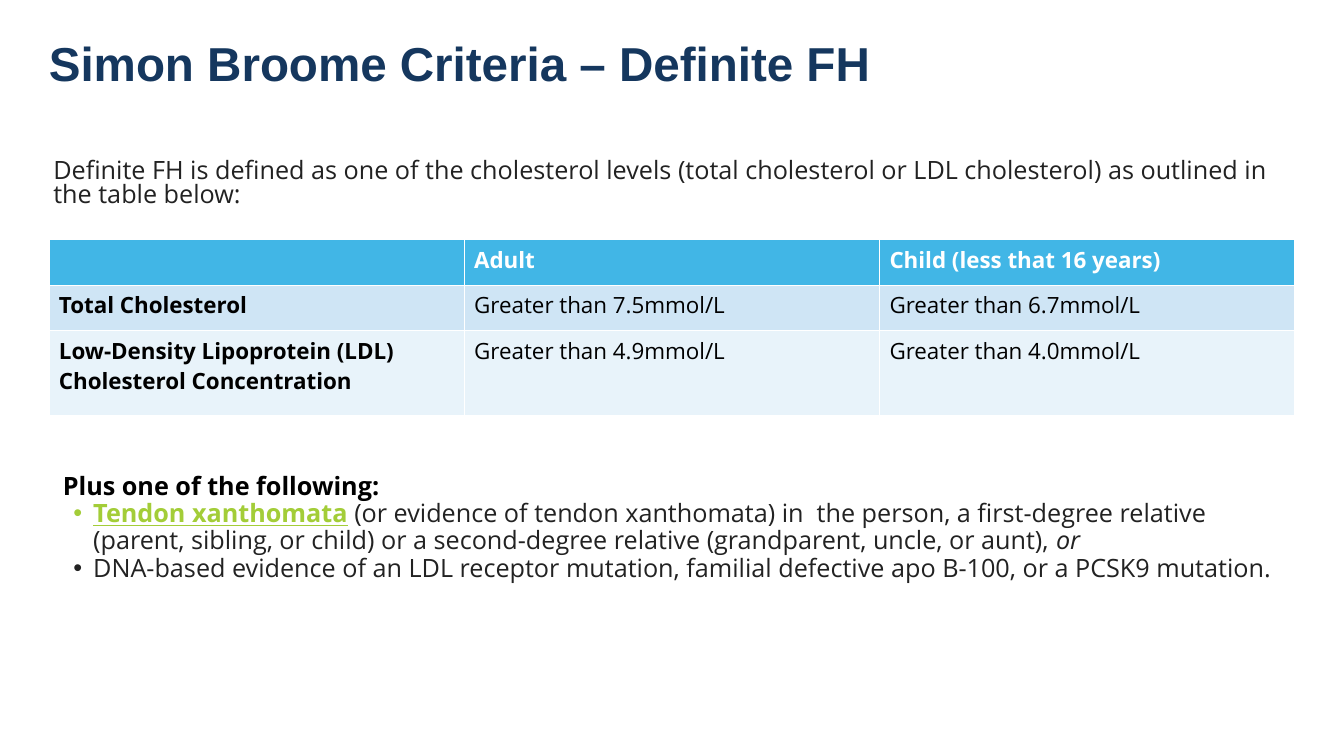
from lxml.etree import SubElement
from pptx import Presentation
from pptx.dml.color import RGBColor
from pptx.enum.text import MSO_ANCHOR
from pptx.oxml.ns import qn
from pptx.util import Pt

NAVY = RGBColor(0x15, 0x37, 0x5E)
DARK = RGBColor(0x22, 0x22, 0x22)
BLACK = RGBColor(0x00, 0x00, 0x00)
WHITE = RGBColor(0xFF, 0xFF, 0xFF)
GREEN = RGBColor(0xA3, 0xCD, 0x38)
ROW_FILLS = [
    RGBColor(0x41, 0xB6, 0xE6),
    RGBColor(0xCF, 0xE5, 0xF5),
    RGBColor(0xE8, 0xF3, 0xFA),
]

TITLE = "Simon Broome Criteria – Definite FH"
INTRO = (
    "Definite FH is defined as one of the cholesterol levels "
    "(total cholesterol or LDL cholesterol) as outlined in the table below:"
)
CHOLESTEROL_LEVELS = [
    ["", "Adult", "Child (less that 16 years)"],
    ["Total Cholesterol", "Greater than 7.5mmol/L", "Greater than 6.7mmol/L"],
    ["Low-Density Lipoprotein (LDL) Cholesterol Concentration",
     "Greater than 4.9mmol/L", "Greater than 4.0mmol/L"],
]
ROW_HEIGHTS = [32.6, 32.6, 60.8]

# Each run: text, colour, further font settings
CRITERIA_HEADING = [("Plus one of the following:", BLACK, {"bold": True})]
CRITERIA = [
    [
        ("Tendon xanthomata", GREEN, {"bold": True, "underline": True}),
        (" ", NAVY, {"bold": True}),
        ("(or evidence of tendon xanthomata) in  the person, a first-degree "
         "relative (parent, sibling, or child) or a second-degree relative "
         "(grandparent, uncle, or aunt), ", DARK, {}),
        ("or", DARK, {"italic": True}),
    ],
    [("DNA-based evidence of an LDL receptor mutation, familial defective "
      "apo B-100, or a PCSK9 mutation.", DARK, {})],
]

TABLE_LEFT, TABLE_TOP, TABLE_WIDTH = 34.9, 170.9, 890
BODY_LEFT, BODY_WIDTH = 31, 898


def add_text_frame(slide, left, top, width, height):
    text_frame = slide.shapes.add_textbox(
        Pt(left), Pt(top), Pt(width), Pt(height)).text_frame
    text_frame.word_wrap = True
    return text_frame


def add_runs(paragraph, runs, size, font_name="Open Sans"):
    for text, color, settings in runs:
        run = paragraph.add_run()
        run.text = text
        font = run.font
        font.name, font.size, font.color.rgb = font_name, Pt(size), color
        for name, value in settings.items():
            setattr(font, name, value)


def set_indent(paragraph, margin, hanging=0, bullet=None):
    properties = paragraph._p.get_or_add_pPr()
    properties.set("marL", str(Pt(margin)))
    properties.set("indent", str(Pt(-hanging)))
    if bullet:
        SubElement(properties, qn("a:buFont"), typeface="Arial")
        SubElement(properties, qn("a:buChar"), char=bullet)


def style_cell(cell, fill):
    """Give the cell thin white borders and a solid fill."""
    properties = cell._tc.get_or_add_tcPr()
    for side in ("lnL", "lnR", "lnT", "lnB"):
        line = SubElement(properties, qn(f"a:{side}"), w=str(Pt(0.5)))
        solid = SubElement(line, qn("a:solidFill"))
        SubElement(solid, qn("a:srgbClr"), val=str(WHITE))
    cell.fill.solid()
    cell.fill.fore_color.rgb = fill


def add_title(slide):
    text_frame = add_text_frame(slide, TABLE_LEFT, 30.2, TABLE_WIDTH, 34.6)
    text_frame.margin_left = text_frame.margin_right = 0
    text_frame.margin_top = text_frame.margin_bottom = 0
    text_frame.vertical_anchor = MSO_ANCHOR.MIDDLE
    paragraph = text_frame.paragraphs[0]
    paragraph.line_spacing = 0.9
    add_runs(paragraph, [(TITLE, NAVY, {"bold": True})], 34, "Arial")


def add_intro(slide):
    text_frame = add_text_frame(slide, BODY_LEFT, 110.9, BODY_WIDTH, 46.8)
    paragraph = text_frame.paragraphs[0]
    paragraph.line_spacing = 0.8
    add_runs(paragraph, [(INTRO, DARK, {})], 18)


def add_cholesterol_table(slide):
    table = slide.shapes.add_table(
        len(CHOLESTEROL_LEVELS), len(CHOLESTEROL_LEVELS[0]),
        Pt(TABLE_LEFT), Pt(TABLE_TOP), Pt(TABLE_WIDTH), Pt(sum(ROW_HEIGHTS))).table
    for column in table.columns:
        column.width = Pt(TABLE_WIDTH / len(table.columns))
    for row_index, texts in enumerate(CHOLESTEROL_LEVELS):
        table.rows[row_index].height = Pt(ROW_HEIGHTS[row_index])
        color = BLACK if row_index else WHITE
        for column_index, text in enumerate(texts):
            cell = table.cell(row_index, column_index)
            style_cell(cell, ROW_FILLS[row_index])
            if text:
                bold = row_index == 0 or column_index == 0
                add_runs(cell.text_frame.paragraphs[0],
                         [(text, color, {"bold": bold})], 16)


def add_criteria(slide):
    text_frame = add_text_frame(slide, BODY_LEFT, 334.8, BODY_WIDTH, 94.3)
    heading = text_frame.paragraphs[0]
    set_indent(heading, 6.75)
    add_runs(heading, CRITERIA_HEADING, 18)
    for runs in CRITERIA:
        paragraph = text_frame.add_paragraph()
        set_indent(paragraph, 28.5, 14.25, "•")
        add_runs(paragraph, runs, 18)
    for paragraph in text_frame.paragraphs:
        paragraph.line_spacing = 0.9


def main():
    presentation = Presentation()
    presentation.slide_width, presentation.slide_height = Pt(960), Pt(540)
    slide = presentation.slides.add_slide(presentation.slide_layouts[6])
    add_title(slide)
    add_intro(slide)
    add_cholesterol_table(slide)
    add_criteria(slide)
    presentation.save("out.pptx")


if __name__ == "__main__":
    main()
